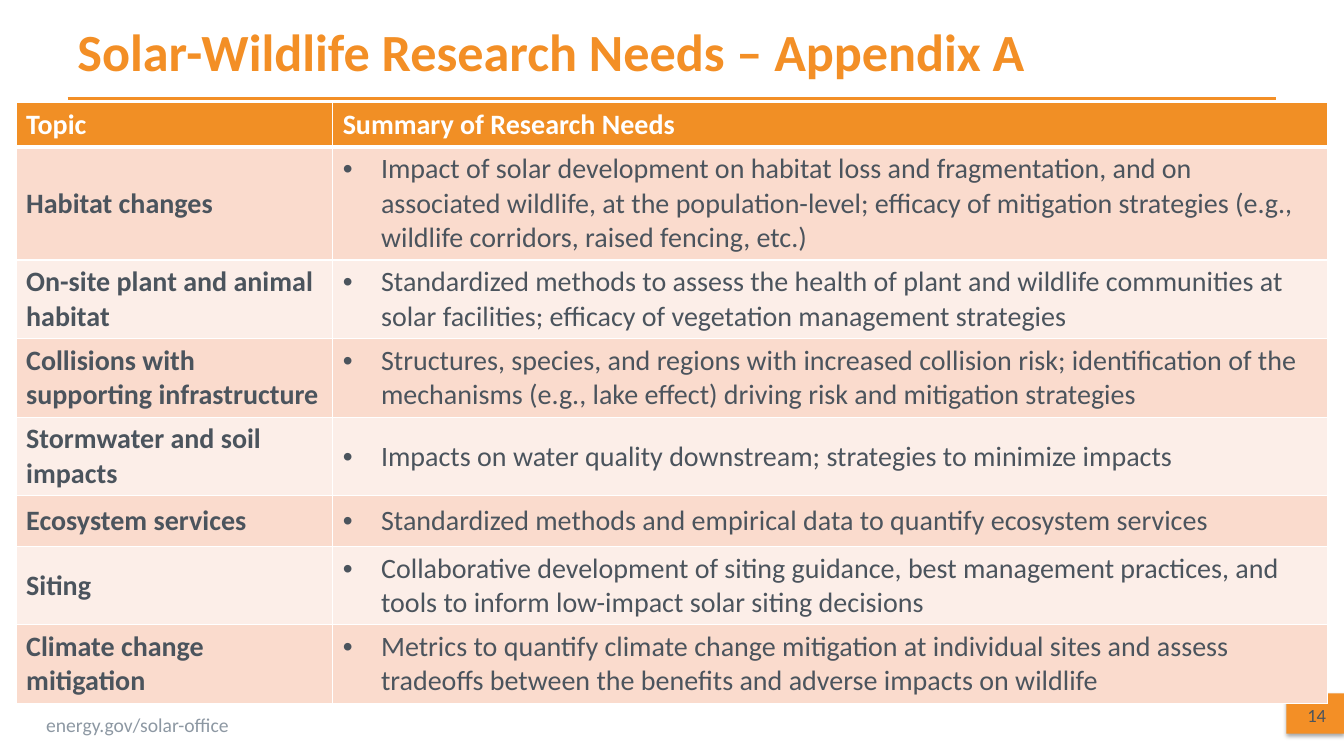
from lxml import etree
from pptx import Presentation
from pptx.dml.color import RGBColor
from pptx.enum.shapes import MSO_CONNECTOR, MSO_SHAPE
from pptx.enum.text import MSO_ANCHOR, PP_ALIGN
from pptx.oxml.ns import qn
from pptx.util import Inches, Pt

RECTANGLE = MSO_SHAPE.RECTANGLE
STRAIGHT = MSO_CONNECTOR.STRAIGHT
TOP, MIDDLE = MSO_ANCHOR.TOP, MSO_ANCHOR.MIDDLE
LEFT, CENTER = PP_ALIGN.LEFT, PP_ALIGN.CENTER
FONT = "Calibri"
COLORS = {
    "accent": "F38F26",
    "header": "F18F25",
    "band_dark": "FADBCD",
    "band_light": "FCEEE8",
    "text": "4B545D",
    "footer": "8D98A3",
    "white": "FFFFFF",
    "shadow": "000000",
}
HEADINGS = ("Topic", "Summary of Research Needs")
RESEARCH_NEEDS = [
    ("Habitat changes", 1.12,
     "Impact of solar development on habitat loss and fragmentation, and on associated wildlife, "
     "at the population-level; efficacy of mitigation strategies (e.g., wildlife corridors, "
     "raised fencing, etc.)"),
    ("On-site plant and animal habitat", 0.78,
     "Standardized methods to assess the health of plant and wildlife communities at solar "
     "facilities; efficacy of vegetation management strategies"),
    ("Collisions with supporting infrastructure", 0.78,
     "Structures, species, and regions with increased collision risk; identification of the "
     "mechanisms (e.g., lake effect) driving risk and mitigation strategies"),
    ("Stormwater and soil impacts", 0.78,
     "Impacts on water quality downstream; strategies to minimize impacts"),
    ("Ecosystem services", 0.5,
     "Standardized methods and empirical data to quantify ecosystem services"),
    ("Siting", 0.78,
     "Collaborative development of siting guidance, best management practices, and tools to "
     "inform low-impact solar siting decisions"),
    ("Climate change mitigation", 0.78,
     "Metrics to quantify climate change mitigation at individual sites and assess tradeoffs "
     "between the benefits and adverse impacts on wildlife"),
]


def rgb(name):
    """Return the named palette colour."""
    return RGBColor.from_string(COLORS[name])


def write(frame, text, size=20, color="text", bold=False, align=LEFT, bullet=False):
    """Write one formatted paragraph into a text frame."""
    paragraph = frame.paragraphs[0]
    paragraph.alignment = align
    if bullet:
        properties = paragraph._p.get_or_add_pPr()
        properties.set("marL", str(Inches(0.38)))
        properties.set("indent", str(-Inches(0.38)))
        etree.SubElement(properties, qn("a:buFont"), typeface="Arial")
        etree.SubElement(properties, qn("a:buChar"), char="•")
    run = paragraph.add_run()
    run.text = text
    run.font.name = FONT
    run.font.size = Pt(size)
    run.font.bold = bold
    run.font.color.rgb = rgb(color)


def add_label(slide, box, text, anchor=MIDDLE, wrap=True, **style):
    """Place a text box in the given box and fill it with text."""
    frame = slide.shapes.add_textbox(*map(Inches, box)).text_frame
    frame.word_wrap = wrap
    frame.vertical_anchor = anchor
    write(frame, text, **style)


def add_title(slide, left, top, width, height):
    """Draw the title with its rule along the lower edge."""
    rule_y = Inches(top + height - 0.01)
    rule = slide.shapes.add_connector(
        STRAIGHT, Inches(left), rule_y, Inches(left + width - 0.01), rule_y)
    rule.line.color.rgb = rgb("accent")
    rule.line.width = Pt(2)
    etree.SubElement(rule._element.spPr, qn("a:effectLst"))
    add_label(slide, (left, top, width, height), "Solar-Wildlife Research Needs – Appendix A",
              size=37.3, color="accent", bold=True)


def add_footer(slide, left, top, width, height):
    """Draw the web address and the page number tab at the slide's right edge."""
    add_label(slide, (left, top + 0.14, 2.04, 0.34), "energy.gov/solar-office",
              anchor=TOP, wrap=False, size=14, color="footer")
    tab_width = 0.57
    tab_left = left + width - tab_width
    tab = slide.shapes.add_shape(
        RECTANGLE, *map(Inches, (tab_left, top, tab_width, height)))
    tab.fill.solid()
    tab.fill.fore_color.rgb = rgb("accent")
    tab.line.fill.background()
    tab.shadow.inherit = False
    effects = tab._element.spPr.find(qn("a:effectLst"))
    shadow = etree.SubElement(
        effects, qn("a:outerShdw"), blurRad=str(Pt(3.1)), dist=str(Pt(1.8)),
        dir="5400000", rotWithShape="0")
    shade = etree.SubElement(shadow, qn("a:srgbClr"), val=COLORS["shadow"])
    etree.SubElement(shade, qn("a:alpha"), val="35000")
    add_label(slide, (tab_left + 0.03, top + 0.01, tab_width - 0.03, height), "14",
              size=13.3, align=CENTER)


def style_cell(cell, fill, top_width=1, bottom_width=1):
    """Give a cell white borders and a solid fill."""
    properties = cell._tc.get_or_add_tcPr()
    for side, width in (("L", 1), ("R", 1), ("T", top_width), ("B", bottom_width)):
        border = etree.SubElement(properties, qn(f"a:ln{side}"), w=str(Pt(width)))
        paint = etree.SubElement(border, qn("a:solidFill"))
        etree.SubElement(paint, qn("a:srgbClr"), val=COLORS["white"])
    cell.fill.solid()
    cell.fill.fore_color.rgb = rgb(fill)


def add_needs_table(slide, left, top, width, topic_width, header_height):
    """Draw the table of research topics and needs."""
    heights = [header_height] + [height for _, height, _ in RESEARCH_NEEDS]
    table = slide.shapes.add_table(
        len(heights), 2, *map(Inches, (left, top, width, sum(heights)))).table
    table.horz_banding = False
    table.columns[0].width = Inches(topic_width)
    table.columns[1].width = Inches(width - topic_width)
    for row, height in zip(table.rows, heights):
        row.height = Inches(height)
    for column, heading in enumerate(HEADINGS):
        cell = table.cell(0, column)
        style_cell(cell, "header", bottom_width=3)
        write(cell.text_frame, heading, color="white", bold=True)
    for row, (topic, _, need) in enumerate(RESEARCH_NEEDS, start=1):
        band = "band_dark" if row % 2 else "band_light"
        for column, text in enumerate((topic, need)):
            cell = table.cell(row, column)
            cell.vertical_anchor = MIDDLE
            style_cell(cell, band, top_width=3 if row == 1 else 1)
            write(cell.text_frame, text, bold=column == 0, bullet=column == 1)


def main():
    """Build the research needs slide and save it."""
    deck = Presentation()
    deck.slide_width, deck.slide_height = Inches(13.33), Inches(7.5)
    slide = deck.slides.add_slide(deck.slide_layouts[6])
    add_footer(slide, 0.36, 6.88, 12.97, 0.4)
    add_title(slide, 0.67, 0.02, 12, 0.97)
    add_needs_table(slide, 0.16, 1.02, 13.01, 3.14, 0.44)
    deck.save("out.pptx")


if __name__ == "__main__":
    main()
